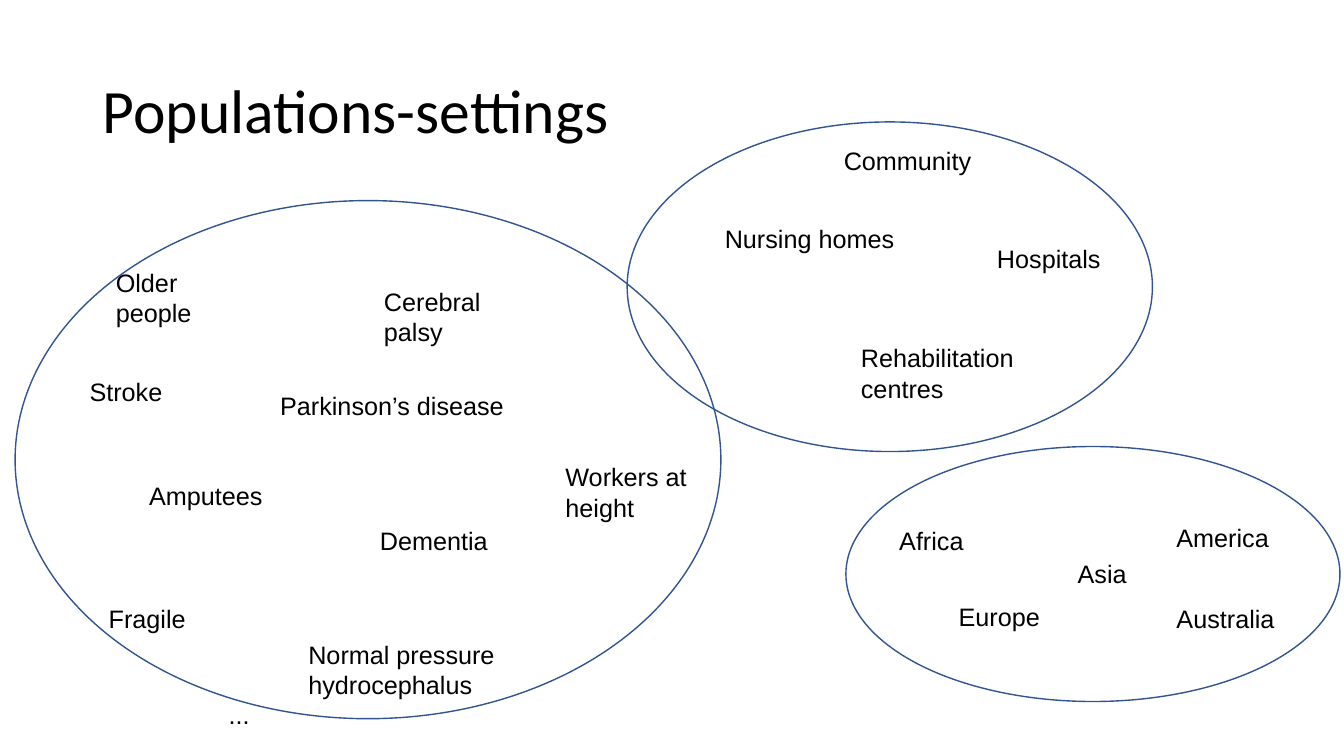
from typing import NamedTuple

from pptx import Presentation
from pptx import util as u
from pptx.dml import color
from pptx.enum import shapes, text

BLACK = "000000"
OUTLINE = "325491"


class Label(NamedTuple):
    wording: str
    left: float
    top: float
    width: float
    height: float = 0.38


class Group(NamedTuple):
    left: float
    top: float
    width: float
    height: float
    labels: list[Label]


POPULATIONS = Group(0.15, 1.99, 7, 5.14, [
    Label("Amputees", 1.38, 4.72, 1.38),
    Label("Stroke", 0.79, 3.68, 0.96),
    Label("Parkinson’s disease", 2.68, 3.82, 2.61, 0.53),
    Label("Dementia", 3.67, 5.16, 1.53),
    Label("Cerebral palsy", 3.71, 2.79, 1.76),
    Label("Fragile", 0.98, 5.94, 1.44, 0.65),
    Label("Older people", 1.05, 2.6, 1.58),
    Label("Normal pressure hydrocephalus", 2.96, 6.29, 3.67, 0.78),
    Label("...", 2.17, 6.89, 0.45),
    Label("Workers at height", 5.51, 4.53, 2.11),
])
SETTINGS = Group(6.22, 1.21, 5.21, 3.27, [
    Label("Community", 8.27, 1.39, 1.79),
    Label("Hospitals", 9.79, 2.36, 1.64, 0.49),
    Label("Rehabilitation centres", 8.44, 3.35, 2.55),
    Label("Nursing homes", 7.09, 2.17, 2.58, 0.74),
])
CONTINENTS = Group(8.39, 4.43, 4.9, 2.53, [
    Label("Asia", 10.59, 5.49, 1.03),
    Label("Africa", 8.82, 5.16, 0.88),
    Label("Europe", 9.41, 5.92, 1.18, 0.47),
    Label("Australia", 11.57, 5.94, 1.18),
    Label("America", 11.57, 5.13, 1.43, 0.54),
])


def rgb(value: str) -> color.RGBColor:
    return color.RGBColor.from_string(value)


def add_label(page, label: Label, font: str = "Arial", size: int = 18):
    """Add a text box with one run and return its text frame."""
    box = page.shapes.add_textbox(
        u.Inches(label.left), u.Inches(label.top),
        u.Inches(label.width), u.Inches(label.height))
    frame = box.text_frame
    frame.word_wrap = True
    span = frame.paragraphs[0].add_run()
    span.text = label.wording
    span.font.name = font
    span.font.size = u.Pt(size)
    span.font.color.rgb = rgb(BLACK)
    return frame


def add_ellipse(page, group: Group) -> None:
    ellipse = page.shapes.add_shape(
        shapes.MSO_SHAPE.OVAL,
        u.Inches(group.left), u.Inches(group.top),
        u.Inches(group.width), u.Inches(group.height))
    ellipse.shadow.inherit = False
    ellipse.fill.background()
    ellipse.line.color.rgb = rgb(OUTLINE)
    ellipse.line.width = u.Pt(1)


def main() -> None:
    deck = Presentation()
    deck.slide_width = u.Inches(13.33)
    deck.slide_height = u.Inches(7.5)
    page = deck.slides.add_slide(deck.slide_layouts[6])

    title = add_label(
        page, Label("Populations-settings", 0.92, 0.4, 11.5, 1.45), "Calibri", 44)
    title.vertical_anchor = text.MSO_ANCHOR.MIDDLE
    title.paragraphs[0].line_spacing = 0.9

    for group in (POPULATIONS, SETTINGS, CONTINENTS):
        for label in group.labels:
            add_label(page, label)
        add_ellipse(page, group)

    deck.save("out.pptx")


if __name__ == "__main__":
    main()
